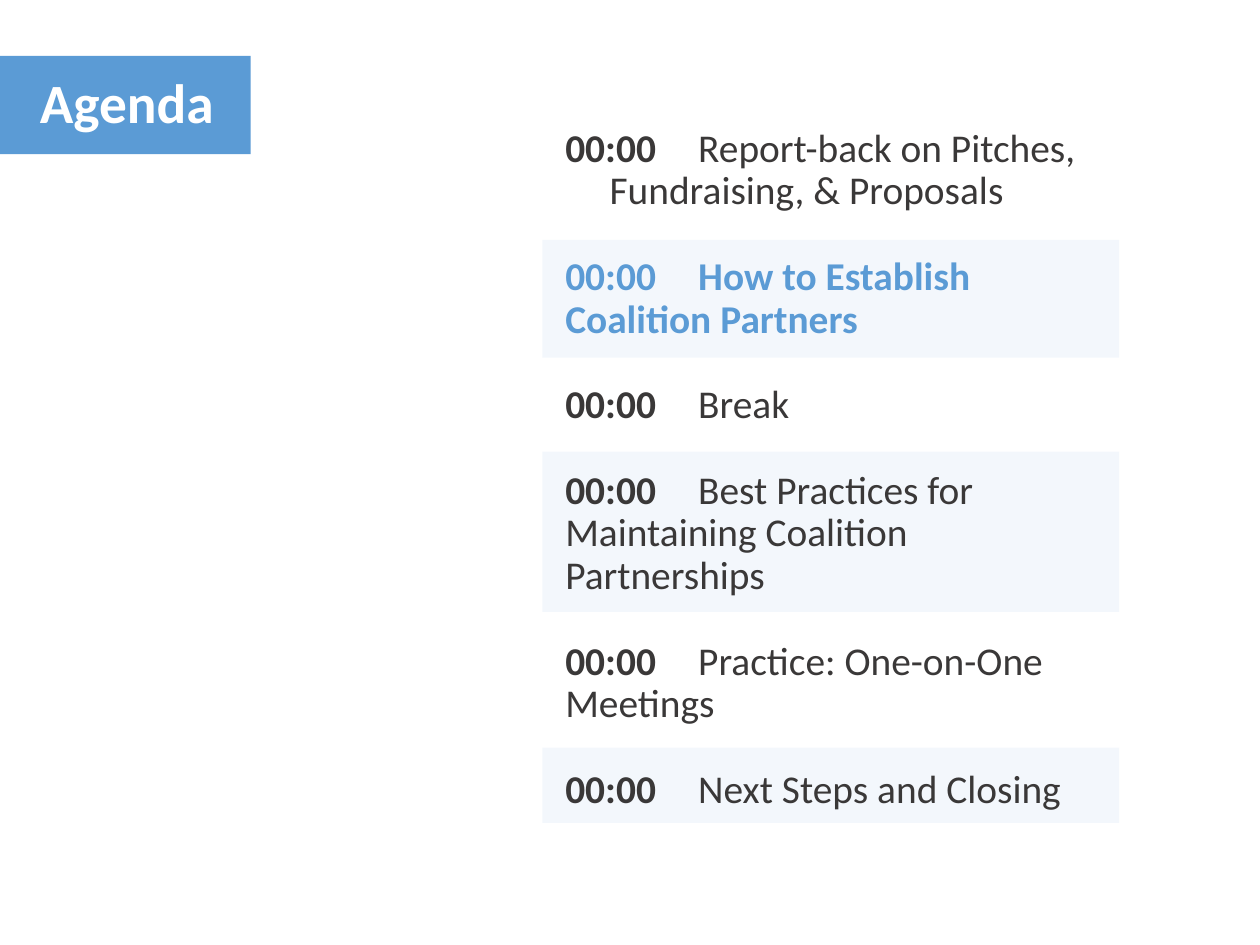
"""Build the agenda slide with timed items on alternating bands."""
from lxml.etree import SubElement
from pptx import Presentation
from pptx.dml.color import RGBColor
from pptx.enum.shapes import MSO_SHAPE
from pptx.enum.text import MSO_ANCHOR, MSO_AUTO_SIZE, PP_ALIGN
from pptx.oxml.ns import qn
from pptx.util import Inches, Pt

BLUE, DARK, WHITE = "5B9BD5", "3A3838", "FFFFFF"


def rgb(color):
    return RGBColor.from_string(color)


def add_run(p, text, size, color, bold):
    r = p.add_run()
    r.text = text
    r.font.name = "Calibri"
    r.font.size = Pt(size)
    r.font.bold = bold
    r.font.color.rgb = rgb(color)


prs = Presentation()
prs.slide_width, prs.slide_height = Inches(14.22), Inches(10.67)
s = prs.slides.add_slide(prs.slide_layouts[1])
title, body = s.shapes.title, s.placeholders[1]

boxes = [
    (6.12, 5.1, 6.51, 1.81, 7),
    (6.12, 2.71, 6.51, 1.33, 7),
    (0, 0.63, 2.83, 1.11, 100),
    (6.12, 8.44, 6.51, 0.85, 7),
]
for x, y, w, h, opacity in boxes:
    sp = s.shapes.add_shape(MSO_SHAPE.RECTANGLE, Inches(x), Inches(y), Inches(w), Inches(h))
    sp.shadow.inherit = False
    sp.line.fill.background()
    sp.fill.solid()
    sp.fill.fore_color.rgb = rgb(BLUE)
    if opacity < 100:
        fill = sp.element.spPr.find(qn("a:solidFill"))
        SubElement(fill[0], qn("a:alpha"), val=str(opacity * 1000))
    title.element.addprevious(sp.element)

for ph, (x, y, w, h), anchor in [
    (title, (0.35, 0.72, 2.81, 0.86), MSO_ANCHOR.MIDDLE),
    (body, (6.28, 1.4, 6.36, 7.86), MSO_ANCHOR.TOP),
]:
    ph.left, ph.top, ph.width, ph.height = Inches(x), Inches(y), Inches(w), Inches(h)
    tf = ph.text_frame
    tf.word_wrap = True
    tf.auto_size = MSO_AUTO_SIZE.NONE
    tf.vertical_anchor = anchor

p = title.text_frame.paragraphs[0]
p.alignment = PP_ALIGN.LEFT
add_run(p, "Agenda", 45, WHITE, True)

agenda = [
    ["Report-back on Pitches,", "\tFundraising, & Proposals"],
    ["How to Establish", "Coalition Partners"],
    ["Break"],
    ["Best Practices for", "Maintaining Coalition", "Partnerships"],
    ["Practice: One-on-One", "Meetings"],
    ["Next Steps and Closing"],
]
current = 1
tf = body.text_frame
for i, lines in enumerate(agenda):
    p = tf.add_paragraph() if i else tf.paragraphs[0]
    p.line_spacing = 0.9
    p.space_before = Pt(35 if i else 0)
    pPr = p._p.get_or_add_pPr()
    pPr.set("marL", "0")
    pPr.set("indent", "0")
    SubElement(pPr, qn("a:buNone"))
    tabs = SubElement(pPr, qn("a:tabLst"))
    SubElement(tabs, qn("a:tab"), pos=str(Inches(1.42)), algn="l")
    color = BLUE if i == current else DARK
    add_run(p, "00:00\t", 32, color, True)
    for n, line in enumerate(lines):
        if n:
            p.add_line_break()
        add_run(p, line, 32, color, i == current)

prs.save("out.pptx")
